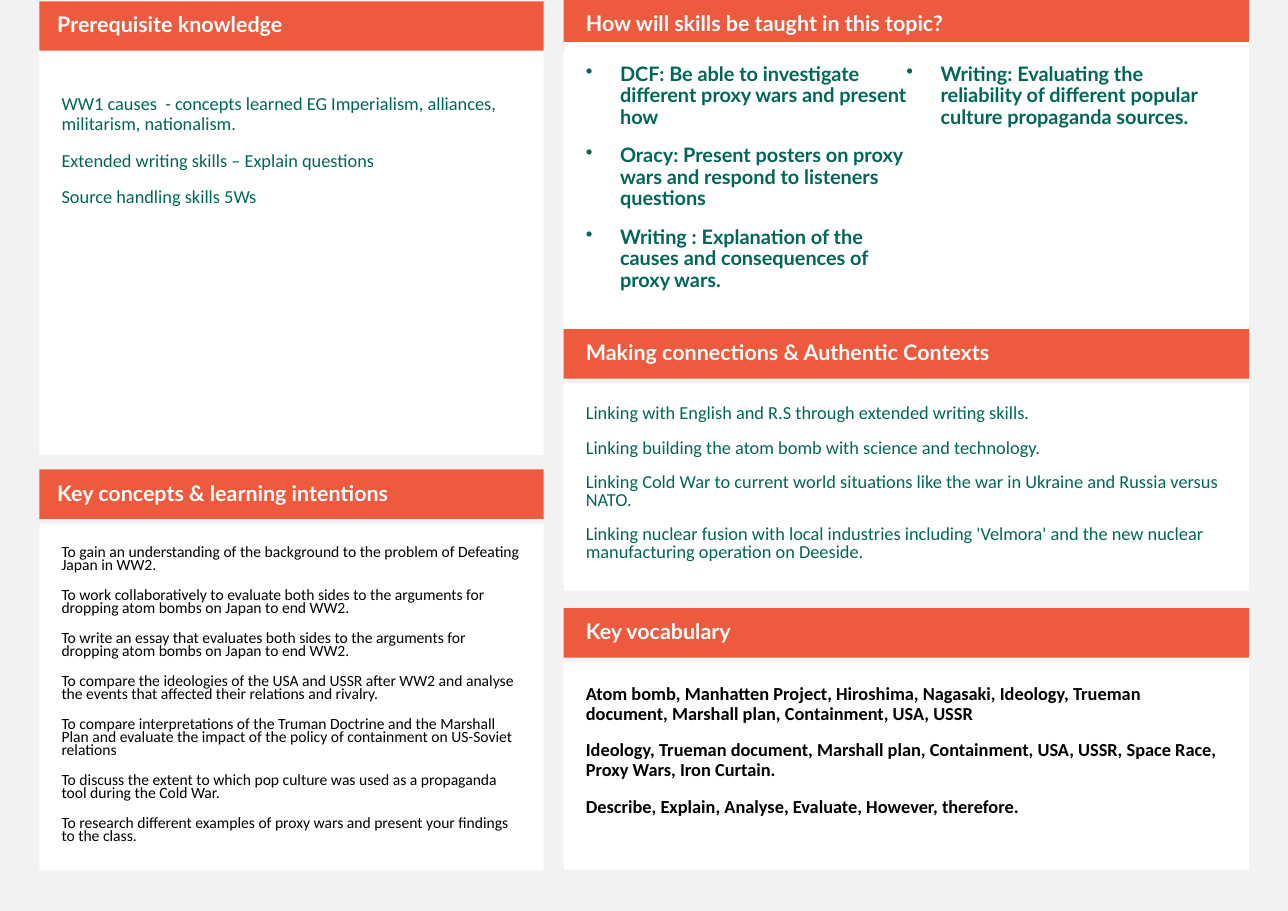
from pptx import Presentation
from pptx import util as u
from pptx.dml.color import RGBColor
from pptx.enum import shapes, text
from pptx.oxml import parse_xml
from pptx.oxml.ns import nsdecls

COLOURS = {
    "page": "F2F2F2",
    "panel": "FFFFFF",
    "bar": "ED5A3E",
    "heading": "FFFFFF",
    "green": "006758",
    "black": "000000",
}

# Left edge, width and heading indent of each column, in cm
LEFT = (0.91, 11.63, 0.41)
RIGHT = (13.0, 15.8, 0.51)
BAR_HEIGHT = 1.14
PANEL_INSET = 0.51
BULLET_INDENT = 0.79

HEADING = {"name": "Lato", "size": u.Pt(14), "bold": True}
NOTE = {"name": "Calibri", "size": u.Pt(12), "bold": False}
INTENTION = {"name": "Calibri", "size": u.Pt(10.2), "bold": False}
SKILL = {"name": "Lato", "size": u.Pt(13), "bold": True}
VOCABULARY = {"name": "Calibri", "size": u.Pt(12), "bold": True}

PREREQUISITES = [
    "WW1 causes  - concepts learned EG Imperialism, alliances, militarism, nationalism.",
    "Extended writing skills – Explain questions",
    "Source handling skills 5Ws",
]
INTENTIONS = [
    "To gain an understanding of the background to the problem of Defeating Japan in WW2.",
    "To work collaboratively to evaluate both sides to the arguments for dropping atom bombs on Japan to end WW2.",
    "To write an essay that evaluates both sides to the arguments for dropping atom bombs on Japan to end WW2.",
    "To compare the ideologies of the USA and USSR after WW2 and analyse the events that affected their relations and rivalry.",
    "To compare interpretations of the Truman Doctrine and the Marshall Plan and evaluate the impact of the policy of containment on US-Soviet relations",
    "To discuss the extent to which pop culture was used as a propaganda tool during the Cold War.",
    "To research different examples of proxy wars and present your findings to the class.",
]
SKILLS = [
    "DCF: Be able to investigate different proxy wars and present how",
    "Oracy: Present posters on proxy wars and respond to listeners questions",
    "Writing : Explanation of the causes and consequences of proxy wars.",
    "Writing: Evaluating the reliability of different popular culture propaganda sources.",
]
CONNECTIONS = [
    "Linking with English and R.S through extended writing skills.",
    "Linking building the atom bomb with science and technology.",
    "Linking Cold War to current world situations like the war in Ukraine and Russia versus NATO.",
    "Linking nuclear fusion with local industries including 'Velmora' and the new nuclear manufacturing operation on Deeside.",
]
KEY_WORDS = [
    "Atom bomb, Manhatten Project, Hiroshima, Nagasaki, Ideology, Trueman document, Marshall plan, Containment, USA, USSR",
    "Ideology, Trueman document, Marshall plan, Containment, USA, USSR, Space Race, Proxy Wars, Iron Curtain.",
    "Describe, Explain, Analyse, Evaluate, However, therefore.",
]


def set_all(target, values):
    for name, value in values.items():
        setattr(target, name, value)


def add_block(slide, box, fill, lines, font, colour, frame_format, spacing=0.9):
    """Add a filled rectangle holding one paragraph per line."""
    block = slide.shapes.add_shape(
        shapes.MSO_SHAPE.RECTANGLE, *(u.Cm(length) for length in box))
    block.shadow.inherit = False
    block.fill.solid()
    block.fill.fore_color.rgb = RGBColor.from_string(COLOURS[fill])
    block.line.fill.background()
    frame = block.text_frame
    set_all(frame, {"word_wrap": True, **frame_format})
    for index, line in enumerate(lines):
        paragraph = frame.add_paragraph() if index else frame.paragraphs[0]
        set_all(paragraph, {"alignment": text.PP_ALIGN.LEFT,
                            "line_spacing": spacing,
                            "space_before": u.Pt(11)})
        run = paragraph.add_run()
        run.text = line
        set_all(run.font, font)
        run.font.color.rgb = RGBColor.from_string(COLOURS[colour])
    return block


def add_heading(slide, column, top, title):
    left, width, indent = column
    add_block(slide, (left, top, width, BAR_HEIGHT), "bar", [title], HEADING, "heading", {
        "vertical_anchor": text.MSO_ANCHOR.MIDDLE,
        "margin_left": u.Cm(indent), "margin_right": u.Cm(0.25),
        "margin_top": u.Cm(0.13), "margin_bottom": u.Cm(0.13),
    })


def add_panel(slide, column, top, height, lines, font, colour,
              spacing=0.9, top_inset=PANEL_INSET):
    left, width, _ = column
    inset = u.Cm(PANEL_INSET)
    return add_block(slide, (left, top, width, height), "panel", lines, font, colour, {
        "vertical_anchor": text.MSO_ANCHOR.TOP,
        "margin_left": inset, "margin_right": inset,
        "margin_top": u.Cm(top_inset), "margin_bottom": inset,
    }, spacing)


def bullet_in_columns(panel, count):
    panel.element.txBody.bodyPr.set("numCol", str(count))
    indent = u.Cm(BULLET_INDENT)
    for paragraph in panel.text_frame.paragraphs:
        properties = paragraph._p.get_or_add_pPr()
        properties.set("marL", str(indent))
        properties.set("indent", str(-indent))
        properties.append(parse_xml(f'<a:buChar {nsdecls("a")} char="•"/>'))


def main():
    deck = Presentation()
    set_all(deck, {"slide_width": u.Cm(29.7), "slide_height": u.Cm(21)})
    slide = deck.slides.add_slide(deck.slide_layouts[6])
    slide.background.fill.solid()
    slide.background.fill.fore_color.rgb = RGBColor.from_string(COLOURS["page"])

    add_panel(slide, LEFT, 0.94, 9.55, PREREQUISITES, NOTE, "green", top_inset=1.25)
    add_heading(slide, LEFT, 0.03, "Prerequisite knowledge")
    add_panel(slide, LEFT, 12.09, 7.98, INTENTIONS, INTENTION, "black", spacing=0.7)
    add_heading(slide, LEFT, 10.82, "Key concepts & learning intentions")

    add_heading(slide, RIGHT, 0, "How will skills be taught in this topic?")
    skills_panel = add_panel(slide, RIGHT, 0.97, 6.6, SKILLS, SKILL, "green")
    bullet_in_columns(skills_panel, 2)
    add_heading(slide, RIGHT, 7.59, "Making connections & Authentic Contexts")
    add_panel(slide, RIGHT, 8.84, 4.78, CONNECTIONS, NOTE, "green", spacing=0.8)
    add_heading(slide, RIGHT, 14.02, "Key vocabulary")
    add_panel(slide, RIGHT, 15.27, 4.78, KEY_WORDS, VOCABULARY, "black")

    deck.save("out.pptx")


if __name__ == "__main__":
    main()
